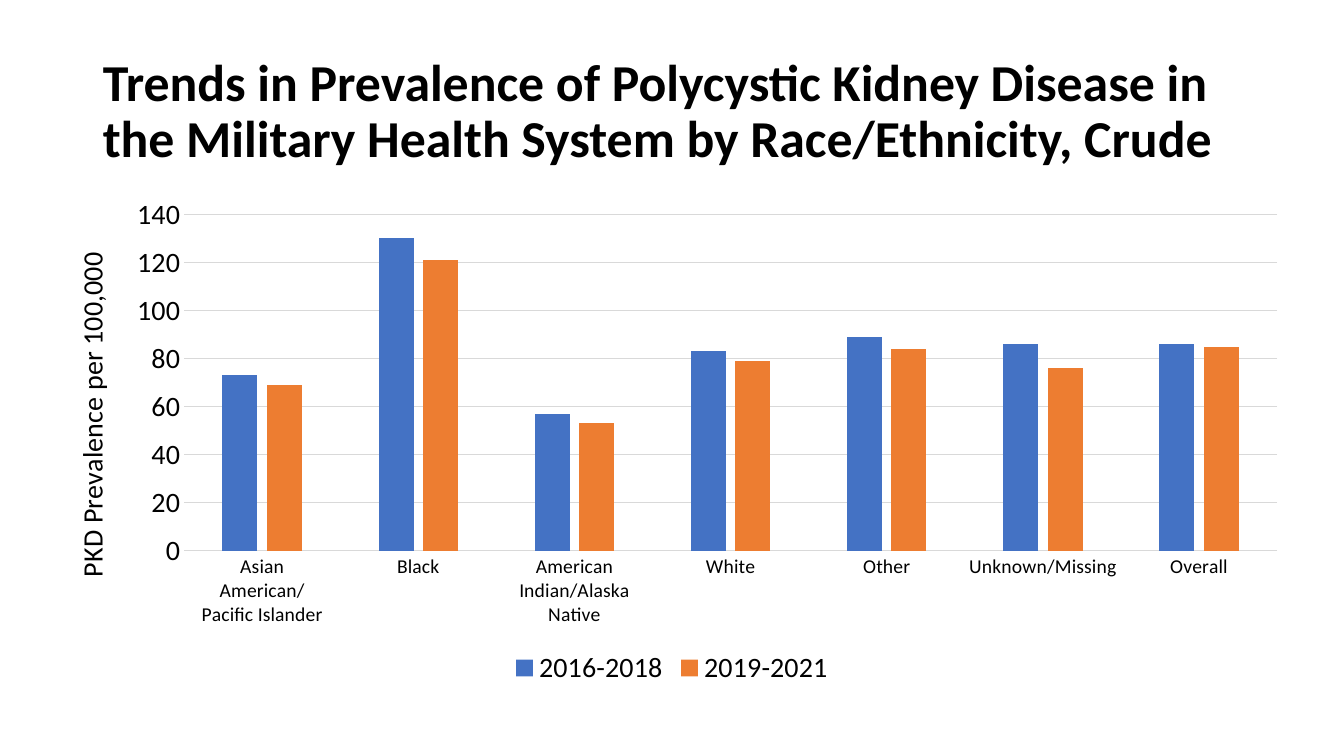
from dataclasses import dataclass

from lxml import etree
from pptx import Presentation
from pptx.chart.data import CategoryChartData
from pptx.dml.color import RGBColor
from pptx.enum.chart import XL_CHART_TYPE, XL_LEGEND_POSITION, XL_TICK_MARK
from pptx.enum.text import MSO_ANCHOR, MSO_AUTO_SIZE
from pptx.oxml.ns import qn
from pptx.util import Inches, Pt

CLUSTERED = XL_CHART_TYPE.COLUMN_CLUSTERED
BOTTOM = XL_LEGEND_POSITION.BOTTOM
NO_TICK = XL_TICK_MARK.NONE
MIDDLE = MSO_ANCHOR.MIDDLE
NO_AUTOFIT = MSO_AUTO_SIZE.NONE
TITLE_ONLY = 5


@dataclass(frozen=True)
class Theme:
    """Colours, font and type sizes of the slide."""
    font: str = "Calibri"
    ink: str = "000000"
    grid: str = "D9D9D9"
    periods: tuple = ("4472C4", "ED7D31")
    title_size: int = 37
    chart_size: int = 20
    category_size: int = 14
    hairline: float = 0.75


THEME = Theme()
WIDTH, HEIGHT = Inches(13.33), Inches(7.5)
HEADLINE = ("Trends in Prevalence of Polycystic Kidney Disease in "
            "the Military Health System by Race/Ethnicity, Crude")
RATE_LABEL = "PKD Prevalence per 100,000"
GROUPS = ("Asian American/Pacific Islander", "Black",
          "American Indian/Alaska Native", "White", "Other",
          "Unknown/Missing", "Overall")
PREVALENCE = {
    "2016-2018": (73, 130, 57, 83, 89, 86, 86),
    "2019-2021": (69, 121, 53, 79, 84, 76, 85),
}


def style_font(font, size, bold=False):
    """Apply the theme's font and ink at a given size."""
    font.name = THEME.font
    font.size = Pt(size)
    font.bold = bold
    font.color.rgb = RGBColor.from_string(THEME.ink)


def write_text(frame, text, size, bold=False, line_spacing=None):
    """Write one formatted paragraph into a text frame."""
    paragraph = frame.paragraphs[0]
    paragraph.line_spacing = line_spacing
    run = paragraph.add_run()
    run.text = text
    style_font(run.font, size, bold)


def style_line(line):
    """Draw a thin line in the grid colour."""
    line.color.rgb = RGBColor.from_string(THEME.grid)
    line.width = Pt(THEME.hairline)


def place(element, index, **shares):
    """Fix the layout of a chart part in shares of the chart's size."""
    for old_layout in element.findall(qn("c:layout")):
        element.remove(old_layout)
    layout = etree.Element(qn("c:layout"))
    manual = etree.SubElement(layout, qn("c:manualLayout"))
    if "w" in shares:
        etree.SubElement(manual, qn("c:layoutTarget"), val="inner")
    for axis in ("x", "y"):
        etree.SubElement(manual, qn(f"c:{axis}Mode"), val="edge")
    for key, share in shares.items():
        etree.SubElement(manual, qn(f"c:{key}"), val=str(share))
    element.insert(index, layout)


def add_headline(slide):
    """Fill and place the title placeholder."""
    headline = slide.shapes.title
    headline.left, headline.top = int(WIDTH * 0.069), int(HEIGHT * 0.053)
    headline.width, headline.height = int(WIDTH * 0.863), int(HEIGHT * 0.193)
    frame = headline.text_frame
    frame.word_wrap = True
    frame.auto_size = NO_AUTOFIT
    frame.vertical_anchor = MIDDLE
    write_text(frame, HEADLINE, THEME.title_size, bold=True, line_spacing=0.9)
    frame.paragraphs[0].alignment = 1


def style_axes(chart):
    """Format the group axis, the rate axis and its title."""
    group_axis, rate_axis = chart.category_axis, chart.value_axis
    for axis, size in ((group_axis, THEME.category_size),
                       (rate_axis, THEME.chart_size)):
        axis.major_tick_mark = axis.minor_tick_mark = NO_TICK
        style_font(axis.tick_labels.font, size)
    style_line(group_axis.format.line)
    rate_axis.format.line.fill.background()
    rate_axis.minimum_scale, rate_axis.maximum_scale = 0, 140
    rate_axis.major_unit = 20
    style_line(rate_axis.major_gridlines.format.line)
    rate_title = rate_axis.axis_title
    write_text(rate_title.text_frame, RATE_LABEL, THEME.chart_size)
    place(rate_title._element, 1, x=0.02, y=0.12)


def add_prevalence_chart(slide):
    """Add the clustered columns of prevalence by group and period."""
    data = CategoryChartData(number_format="0")
    data.categories = GROUPS
    for period, rates in PREVALENCE.items():
        data.add_series(period, rates)
    chart = slide.shapes.add_chart(
        CLUSTERED, int(WIDTH * 0.031), int(HEIGHT * 0.247),
        int(WIDTH * 0.938), int(HEIGHT * 0.667), data).chart
    style_font(chart.font, THEME.chart_size)
    chart.has_title = False
    chart.has_legend = True
    chart.legend.position = BOTTOM
    chart.legend.include_in_layout = False
    style_font(chart.legend.font, THEME.chart_size)
    plot = chart.plots[0]
    plot.vary_by_categories = False
    plot.gap_width, plot.overlap = 219, -27
    for series, color in zip(plot.series, THEME.periods):
        series.format.fill.solid()
        series.format.fill.fore_color.rgb = RGBColor.from_string(color)
    style_axes(chart)
    plot_area = chart._chartSpace.find(".//" + qn("c:plotArea"))
    place(plot_area, 0, x=0.113, y=0.055, w=0.867, h=0.667)


def main():
    """Build the slide and save it."""
    deck = Presentation()
    deck.slide_width, deck.slide_height = WIDTH, HEIGHT
    slide = deck.slides.add_slide(deck.slide_layouts[TITLE_ONLY])
    add_headline(slide)
    add_prevalence_chart(slide)
    deck.save("out.pptx")


if __name__ == "__main__":
    main()
